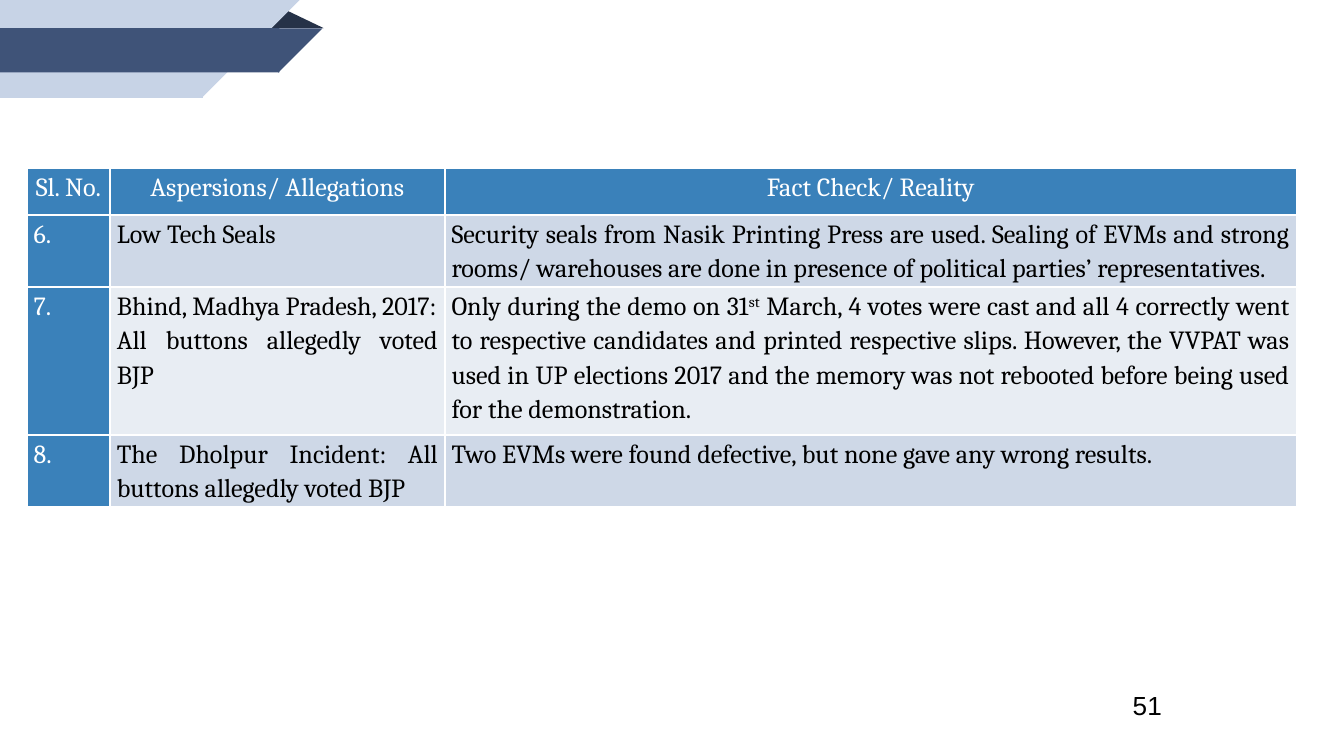
"""Build the fact check table slide with its corner ribbon."""
from pptx import Presentation
from pptx.dml.color import RGBColor
from pptx.enum.shapes import MSO_SHAPE
from pptx.enum.text import MSO_ANCHOR, PP_ALIGN
from pptx.oxml.ns import qn
from pptx.util import Inches, Pt

RECT = MSO_SHAPE.RECTANGLE
WEDGE = MSO_SHAPE.RIGHT_TRIANGLE
PEAK = MSO_SHAPE.ISOSCELES_TRIANGLE
CENTER, JUSTIFY = PP_ALIGN.CENTER, PP_ALIGN.JUSTIFY
MIDDLE = MSO_ANCHOR.MIDDLE
WHITE = RGBColor(0xFF, 0xFF, 0xFF)
BLACK = RGBColor(0, 0, 0)
DARK = RGBColor(0x26, 0x32, 0x48)
NAVY = RGBColor(0x3F, 0x53, 0x78)
PALE = RGBColor(0xC7, 0xD3, 0xE6)
BLUE = RGBColor(0x3A, 0x81, 0xBA)
BANDS = RGBColor(0xE8, 0xED, 0xF3), RGBColor(0xCE, 0xD8, 0xE7)


def write(para, text, face, color):
    run = para.add_run()
    run.text = text
    run.font.name = face
    run.font.size = Pt(14)
    run.font.bold = False
    run.font.color.rgb = color
    return run


deck = Presentation()
deck.slide_width = Inches(10)
deck.slide_height = deck.slide_width * 9 // 16
slide = deck.slides.add_slide(deck.slide_layouts[6])
shapes = slide.shapes

ribbon = [
    (PEAK, 1.98, 0.07, 0.43, 0.14, DARK),
    (RECT, 0, 0, 1.51, 0.73, PALE),
    (WEDGE, 1.5, 0, 0.73, 0.73, PALE),
    (RECT, 0, 0.21, 2.08, 0.33, NAVY),
    (WEDGE, 2.07, 0.21, 0.33, 0.33, NAVY),
]
for kind, left, top, width, height, color in ribbon:
    part = shapes.add_shape(kind, Inches(left), Inches(top), Inches(width), Inches(height))
    part.shadow.inherit = False
    part.fill.solid()
    part.fill.fore_color.rgb = color
    part.line.fill.background()
    if kind == PEAK:
        part.adjustments[0] = 0.32
    if kind == WEDGE:
        part.rotation = 180
        part._element.spPr.find(qn("a:xfrm")).set("flipH", "1")

box = shapes.add_textbox(Inches(8.33), Inches(5.07), Inches(1.63), Inches(0.35))
frame = box.text_frame
frame.word_wrap = True
frame.vertical_anchor = MIDDLE
frame.margin_left = frame.margin_right = frame.margin_top = frame.margin_bottom = Inches(0.1)
write(frame.paragraphs[0], "51", "Arial", BLACK)

rows = [
    ("Sl. No.", "Aspersions/ Allegations", "Fact Check/ Reality"),
    ("6.", "Low Tech Seals",
     "Security seals from Nasik Printing Press are used. Sealing of EVMs and strong rooms/ "
     "warehouses are done in presence of political parties’ representatives."),
    ("7.", "Bhind, Madhya Pradesh, 2017:\nAll buttons allegedly voted BJP",
     "Only during the demo on 31^st^ March, 4 votes were cast and all 4 correctly went to "
     "respective candidates and printed respective slips. However, the VVPAT was used in UP "
     "elections 2017 and the memory was not rebooted before being used for the demonstration."),
    ("8.", "The Dholpur Incident: All buttons allegedly voted BJP",
     "Two EVMs were found defective, but none gave any wrong results."),
]
widths = 0.62, 2.49, 6.34
heights = 0.35, 0.43, 1.1, 0.43
table = shapes.add_table(len(rows), len(widths), Inches(0.2), Inches(1.25),
                         Inches(sum(widths)), Inches(sum(heights))).table
table.first_col = True
for col, width in zip(table.columns, widths):
    col.width = Inches(width)
for r, texts in enumerate(rows):
    table.rows[r].height = Inches(heights[r])
    for c, text in enumerate(texts):
        cell = table.cell(r, c)
        head = r == 0 or c == 0
        cell.margin_left = cell.margin_right = Inches(0.05)
        cell.margin_top = cell.margin_bottom = 0
        cell.fill.solid()
        cell.fill.fore_color.rgb = BLUE if head else BANDS[r % 2]
        for i, line in enumerate(text.split("\n")):
            para = cell.text_frame.add_paragraph() if i else cell.text_frame.paragraphs[0]
            para.alignment = JUSTIFY if r else CENTER
            para.line_spacing = 1.15
            for n, piece in enumerate(line.split("^")):
                run = write(para, piece, "Cambria", WHITE if head else BLACK)
                if n % 2:
                    run._r.get_or_add_rPr().set("baseline", "30000")

deck.save("out.pptx")
